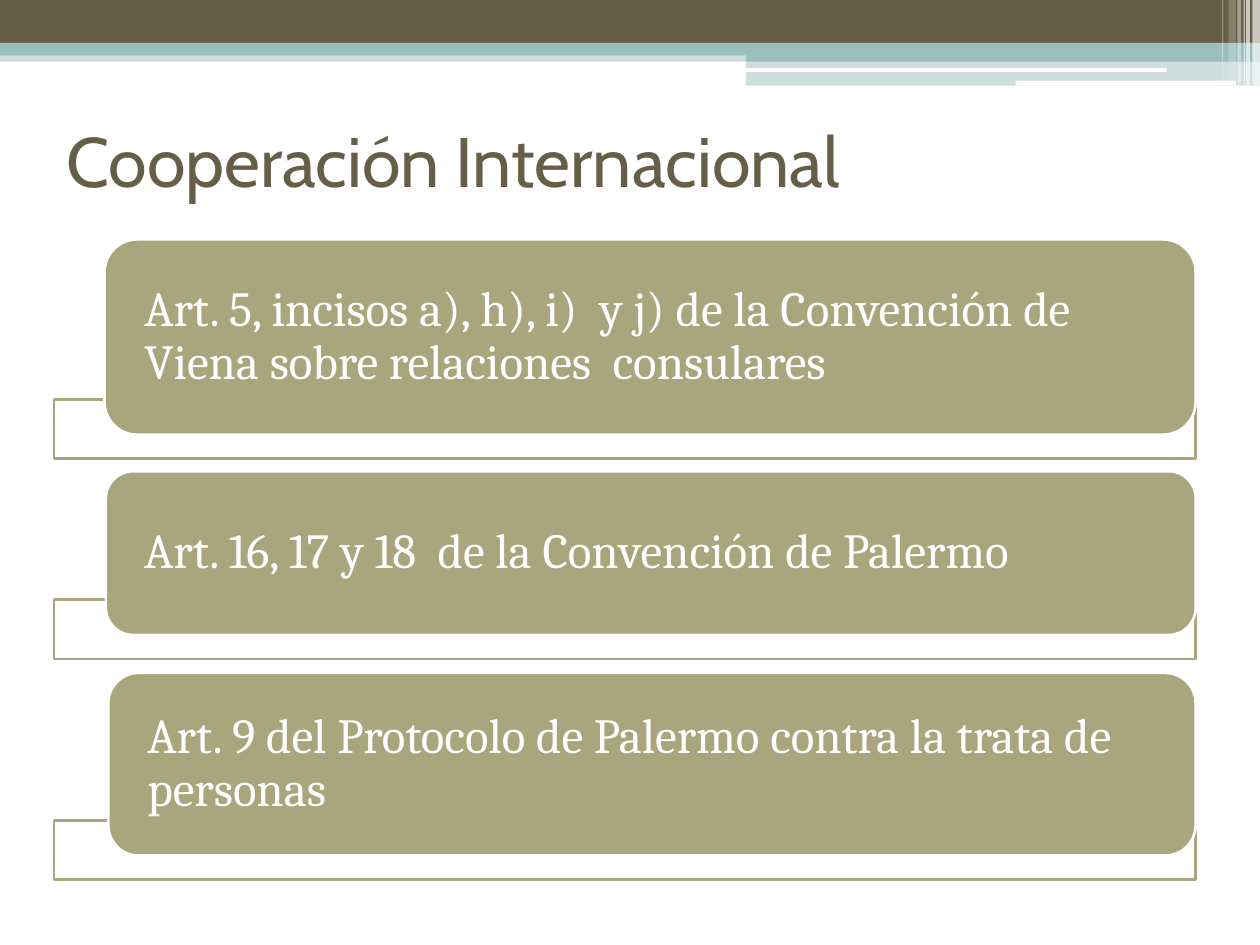
from pptx import Presentation
from pptx.dml.color import RGBColor
from pptx.enum.shapes import MSO_SHAPE as Shape
from pptx.enum.text import MSO_ANCHOR as Anchor, PP_ALIGN as Align
from pptx.oxml.ns import qn
from pptx.util import Inches, Pt
from lxml import etree

BROWN, TEAL, OLIVE, WHITE = "675E47", "9CBEBD", "A9A57C", "FFFFFF"


def color(hex_string):
    return RGBColor.from_string(hex_string)


class Deck:
    heading_font = "Cabin"
    body_font = "Cambria"
    line_width = Pt(1.5)

    def __init__(self, slide):
        self.slide = slide

    def box(self, left, top, width, height, fill, opacity=100, line=None,
            kind=Shape.RECTANGLE):
        box = self.slide.shapes.add_shape(
            kind, Inches(left), Inches(top), Inches(width), Inches(height))
        box.shadow.inherit = False
        box.fill.solid()
        box.fill.fore_color.rgb = color(fill)
        if opacity < 100:
            solid_fill = box.element.spPr.find(qn("a:solidFill"))
            etree.SubElement(solid_fill[0], qn("a:alpha"),
                             val=str(opacity * 1000))
        if line:
            box.line.color.rgb = color(line)
            box.line.width = self.line_width
        else:
            box.line.fill.background()
        return box

    def set_text(self, frame, text, size, font, text_color):
        frame.word_wrap = True
        frame.vertical_anchor = Anchor.MIDDLE
        frame.text = text
        paragraph = frame.paragraphs[0]
        paragraph.alignment = Align.LEFT
        style = paragraph.runs[0].font
        style.size, style.name = Pt(size), font
        style.color.rgb = color(text_color)
        return paragraph

    def title(self, left, top, width, height, text):
        heading = self.slide.shapes.add_textbox(
            Inches(left), Inches(top), Inches(width), Inches(height))
        self.set_text(heading.text_frame, text, 40, self.heading_font, BROWN)

    def article(self, left, top, width, height, text):
        card = self.box(left, top, width, height, OLIVE, line=WHITE,
                        kind=Shape.ROUNDED_RECTANGLE)
        frame = card.text_frame
        frame.margin_left = frame.margin_right = Inches(0.24)
        frame.margin_top = frame.margin_bottom = 0
        wording = self.set_text(frame, text, 28, self.body_font, WHITE)
        wording.line_spacing = 0.9


def main():
    prs = Presentation()
    prs.slide_width, prs.slide_height = Inches(10), Inches(7.5)
    deck = Deck(prs.slides.add_slide(prs.slide_layouts[6]))

    # Header bands: left, top, width, height, colour, opacity
    for band in [
        (0, 0.4, 10, 0.09, TEAL, 50),
        (0, 0, 10, 0.34, BROWN, 100),
        (0, 0.34, 10, 0.1, TEAL, 100),
        (5.92, 0.39, 4.08, 0.1, TEAL, 100),
        (5.92, 0.48, 4.08, 0.2, TEAL, 50),
    ]:
        deck.box(*band)

    # White rounded strips across the bands
    for strip in [(5.91, 0.54, 3.35, 0.03), (8.06, 0.64, 1.75, 0.04)]:
        deck.box(*strip, WHITE, kind=Shape.ROUNDED_RECTANGLE)

    # Translucent stripes at the right edge: left, width, height, opacity
    for left, width, height, opacity in [
        (9.94, 0.06, 0.68, 65),
        (9.89, 0.03, 0.68, 65),
        (9.87, 0.01, 0.68, 60),
        (9.82, 0.03, 0.68, 40),
        (9.75, 0.06, 0.64, 20),
        (9.7, 0.01, 0.64, 30),
    ]:
        deck.box(left, 0, width, height, WHITE, opacity)

    deck.title(0.43, 0.68, 9, 1.17, "Cooperación Internacional")

    # Articles, each over an outlined tray that starts 0.28 above the card's end
    right_edge, tray_overlap = 9.49, 0.28
    for left, top, height, text in [
        (0.83, 1.9, 1.55, "Art. 5, incisos a), h), i)  y j) de la Convención "
                          "de Viena sobre relaciones  consulares"),
        (0.84, 3.74, 1.3, "Art. 16, 17 y 18  de la Convención de Palermo"),
        (0.86, 5.34, 1.45, "Art. 9 del Protocolo de Palermo contra la trata "
                           "de personas"),
    ]:
        deck.box(0.43, top + height - tray_overlap, 9.06, 0.47, WHITE, 90, OLIVE)
        deck.article(left, top, right_edge - left, height, text)

    prs.save("out.pptx")


if __name__ == "__main__":
    main()
